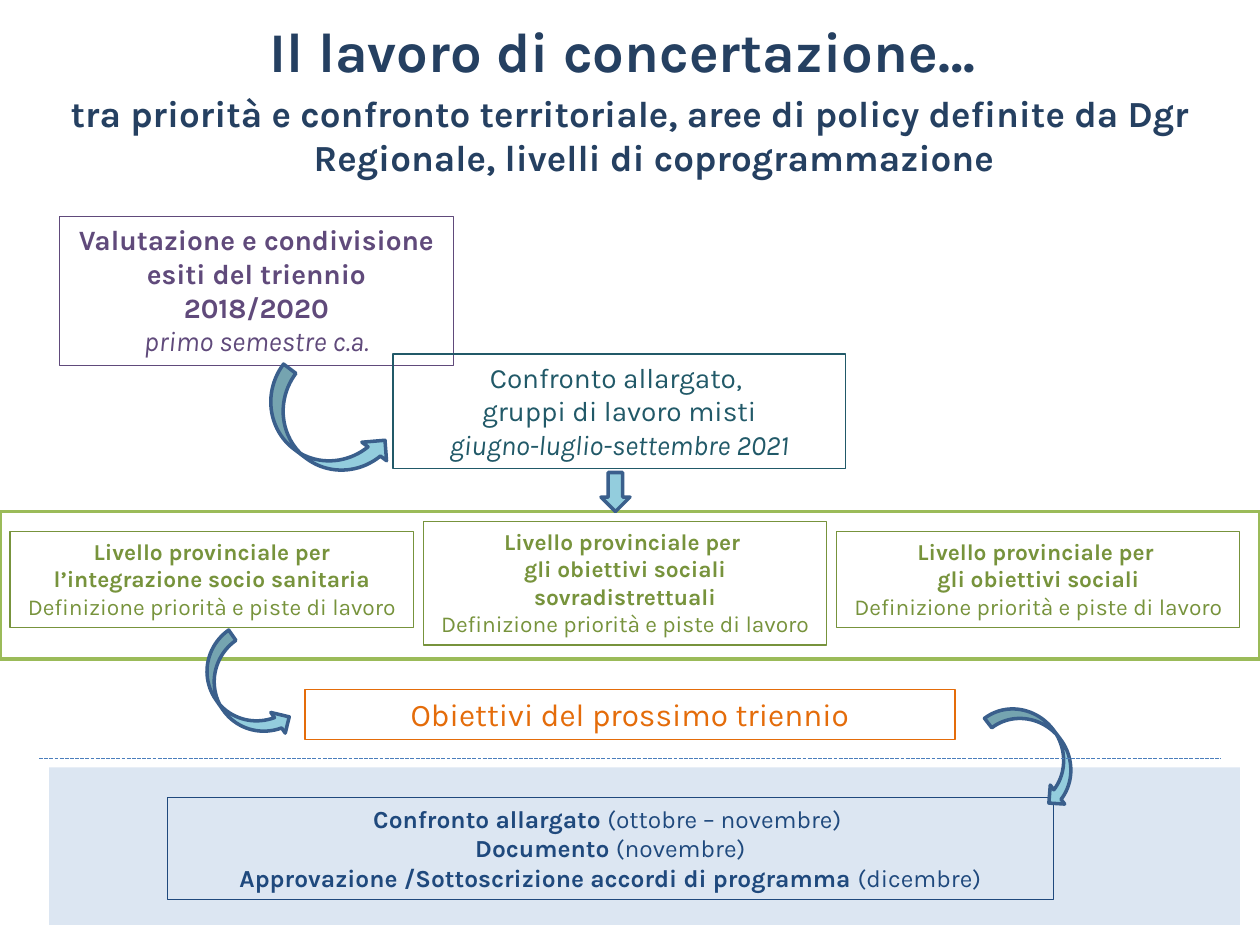
from dataclasses import dataclass
from pptx import Presentation
from pptx.dml.color import RGBColor
from pptx.enum.dml import MSO_LINE
from pptx.enum.shapes import MSO_CONNECTOR, MSO_SHAPE
from pptx.enum.text import MSO_ANCHOR, MSO_AUTO_SIZE, PP_ALIGN
from pptx.oxml.ns import qn
from pptx.util import Inches, Pt
from lxml.etree import SubElement


@dataclass(frozen=True)
class Theme:
    font: str = "Karla"
    navy: str = "254061"
    purple: str = "604A7B"
    teal: str = "215968"
    green: str = "77933C"
    lime: str = "9BBB59"
    orange: str = "E46C0A"
    blue: str = "1F497D"
    pale: str = "DCE6F2"
    sky: str = "93CDDD"
    edge: str = "3A5F8C"
    rule: str = "4B7EBC"
    head: int = 32
    sub: int = 21
    goal: int = 18
    step: int = 16
    plan: int = 14
    level: int = 13
    thin: float = 0.75
    thick: float = 2


T = Theme()

HEAD = [
    ("Il lavoro di concertazione… ", T.head),
    ("tra priorità e confronto territoriale, aree di policy definite da Dgr "
     "Regionale, livelli di coprogrammazione", T.sub),
]

TASK = [("Definizione priorità e piste di lavoro", "")]
LEVELS = [
    (4.22, 0.76, [[("Livello provinciale per l’integrazione socio sanitaria", "b")], TASK]),
    (4.14, 0.98, [[("Livello provinciale per ", "b")],
                  [("gli obiettivi sociali sovradistrettuali", "b")], TASK]),
    (4.22, 0.76, [[("Livello provinciale per ", "b")],
                  [("gli obiettivi sociali", "b")], TASK]),
]
LEFT, WIDE, GAP = 0.08, 3.2, 0.08

BOXES = [
    ((0.47, 1.72, 3.13, 1.18), T.purple, T.step, [
        [("Valutazione e condivisione esiti del triennio 2018/2020", "b")],
        [("primo semestre c.a.", "i")]]),
    ((3.12, 2.81, 3.59, 0.91), T.teal, T.step, [
        [("Confronto allargato, ", "")],
        [("gruppi di lavoro misti", "")],
        [("giugno-luglio-settembre 2021", "i")]]),
    ((2.42, 5.47, 5.16, 0.4), T.orange, T.goal, [
        [("Obiettivi del prossimo triennio", "")]]),
    ((1.33, 6.33, 7.03, 0.81), T.blue, T.plan, [
        [("Confronto allargato ", "b"), ("(ottobre – novembre) ", "")],
        [("Documento ", "b"), ("(novembre)", "")],
        [("Approvazione /Sottoscrizione accordi di programma ", "b"), ("(dicembre)", "")]]),
]
BOXES += [((LEFT + i * (WIDE + GAP), top, WIDE, high), T.green, T.level, text)
          for i, (top, high, text) in enumerate(LEVELS)]

CURVE, DOWN = MSO_SHAPE.CURVED_DOWN_ARROW, MSO_SHAPE.DOWN_ARROW
ARROWS = [
    (CURVE, (1.99, 3.18, 1.13, 0.49), 216.9, "H"),
    (CURVE, (1.45, 5.3, 0.94, 0.4), 235.1, "H"),
    (CURVE, (7.78, 5.77, 0.94, 0.38), 232.8, "HV"),
    (DOWN, (4.77, 3.75, 0.23, 0.31), 0, ""),
]


def color(code):
    return RGBColor.from_string(code)


def draw(slide, kind, at, fill=None, line=None, width=T.thin):
    shape = slide.shapes.add_shape(kind, *map(Inches, at))
    shape.shadow.inherit = False
    if fill:
        shape.fill.solid()
        shape.fill.fore_color.rgb = color(fill)
    else:
        shape.fill.background()
    if line:
        shape.line.color.rgb = color(line)
        shape.line.width = Pt(width)
    else:
        shape.line.fill.background()
    return shape


def write(para, text, size, tint, style):
    run = para.add_run()
    run.text = text
    font = run.font
    font.name, font.size = T.font, Pt(size)
    font.color.rgb = color(tint)
    font.bold, font.italic = "b" in style, "i" in style


def lines(frame, count):
    paras = [frame.paragraphs[0]] + [frame.add_paragraph() for _ in range(count - 1)]
    for para in paras:
        para.alignment = PP_ALIGN.CENTER
    return paras


def title(slide):
    shape = slide.shapes.title
    shape.left, shape.top, shape.width, shape.height = map(Inches, (0.31, 0.08, 9.38, 1.64))
    frame = shape.text_frame
    frame.auto_size = MSO_AUTO_SIZE.NONE
    frame.vertical_anchor = MSO_ANCHOR.TOP
    for para, (text, size) in zip(lines(frame, len(HEAD)), HEAD):
        para.space_before = Pt(size * 0.2)
        props = para._p.get_or_add_pPr()
        props.set("marL", str(Inches(0.38)))
        props.set("indent", str(Inches(-0.38)))
        write(para, text, size, T.navy, "b")


def box(slide, at, tint, size, text):
    frame = draw(slide, MSO_SHAPE.RECTANGLE, at, line=tint).text_frame
    frame.word_wrap = True
    frame.auto_size = MSO_AUTO_SIZE.SHAPE_TO_FIT_TEXT
    frame.vertical_anchor = MSO_ANCHOR.TOP
    for para, runs in zip(lines(frame, len(text)), text):
        for words, style in runs:
            write(para, words, size, tint, style)


def arrow(slide, kind, at, turn, flips):
    shape = draw(slide, kind, at, T.sky, T.edge, T.thick)
    shape.rotation = turn
    for axis in flips:
        shape._element.spPr.xfrm.set("flip" + axis, "1")


def rule(slide):
    line = slide.shapes.add_connector(
        MSO_CONNECTOR.STRAIGHT, *map(Inches, (0.31, 6.02, 9.69, 6.02)))
    line.line.color.rgb = color(T.rule)
    line.line.width = Pt(T.thin)
    line.line.dash_style = MSO_LINE.SQUARE_DOT
    SubElement(line._element.spPr, qn("a:effectLst"))


def main():
    deck = Presentation()
    deck.slide_width, deck.slide_height = Inches(10), Inches(7.5)
    slide = deck.slides.add_slide(deck.slide_layouts[5])
    title(slide)
    draw(slide, MSO_SHAPE.RECTANGLE, (0.39, 6.09, 9.45, 1.25), fill=T.pale)
    for item in BOXES:
        box(slide, *item)
    draw(slide, MSO_SHAPE.RECTANGLE, (0, 4.06, 10, 1.17), line=T.lime, width=T.thick)
    for item in ARROWS:
        arrow(slide, *item)
    rule(slide)
    deck.save("out.pptx")


if __name__ == "__main__":
    main()
